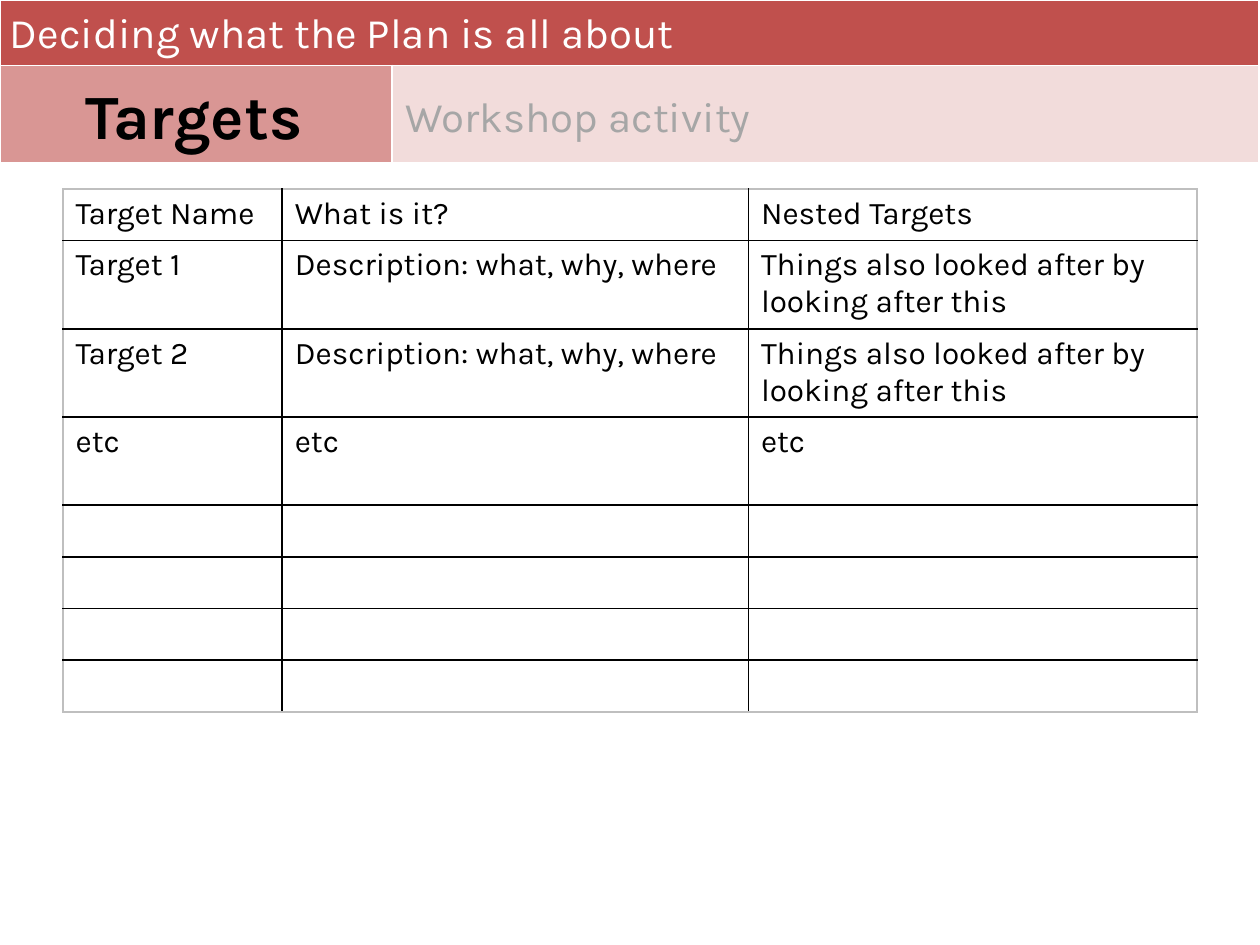
from lxml import etree
from pptx import Presentation
from pptx.dml.color import RGBColor
from pptx.enum.text import MSO_ANCHOR, PP_ALIGN
from pptx.oxml.ns import qn
from pptx.util import Inches, Pt

LEFT, CENTER = PP_ALIGN.LEFT, PP_ALIGN.CENTER
MIDDLE = MSO_ANCHOR.MIDDLE
FONT = "Karla"
COLORS = {
    "title_band": "C0504D",
    "label_band": "D99694",
    "activity_band": "F2DCDB",
    "activity_text": "A6A6A6",
    "outline": "BFBFBF",
    "white": "FFFFFF",
    "black": "000000",
}
TARGET_ROWS = [
    ["Target Name", "What is it?", "Nested Targets"],
    *[
        [
            f"Target {number}",
            "Description: what, why, where",
            "Things also looked after by looking after this",
        ]
        for number in (1, 2)
    ],
    ["etc"] * 3,
]
ROW_HEIGHTS = [0.41] + [0.7] * 3 + [0.41] * 4


def write_text(text_frame, text, size=18, color="black", bold=False, align=LEFT):
    paragraph = text_frame.paragraphs[0]
    paragraph.alignment = align
    run = paragraph.add_run()
    run.text = text
    run.font.name = FONT
    run.font.size = Pt(size)
    run.font.bold = bold
    run.font.color.rgb = RGBColor.from_string(COLORS[color])


def add_text_box(slide, left, top, width, height, text, **text_format):
    shape = slide.shapes.add_textbox(
        Inches(left), Inches(top), Inches(width), Inches(height)
    )
    shape.text_frame.word_wrap = True
    shape.text_frame.vertical_anchor = MIDDLE
    write_text(shape.text_frame, text, **text_format)


def add_plain_table(slide, left, top, widths, heights):
    table = slide.shapes.add_table(
        len(heights), len(widths), Inches(left), Inches(top),
        Inches(sum(widths)), Inches(sum(heights)),
    ).table
    table.first_row = False
    table.horz_banding = False
    for column, width in zip(table.columns, widths):
        column.width = Inches(width)
    for row, height in zip(table.rows, heights):
        row.height = Inches(height)
    return table


def set_borders(cell, **side_colors):
    properties = cell._tc.get_or_add_tcPr()
    for side in "LRTB":
        line = etree.SubElement(properties, qn(f"a:ln{side}"), w=str(Pt(1)))
        fill = etree.SubElement(line, qn("a:solidFill"))
        etree.SubElement(fill, qn("a:srgbClr"), val=COLORS[side_colors[side]])


def add_header_bands(slide):
    table = add_plain_table(slide, 0, 0, [3.11, 6.88], [0.52, 0.77])
    bands = [["title_band", "title_band"], ["label_band", "activity_band"]]
    for row, colors in zip(table.rows, bands):
        for cell, color in zip(row.cells, colors):
            set_borders(cell, **dict.fromkeys("LRTB", "white"))
            cell.fill.solid()
            cell.fill.fore_color.rgb = RGBColor.from_string(COLORS[color])
    table.cell(0, 0).merge(table.cell(0, 1))


def add_targets_table(slide):
    widths = [1.74, 3.7, 3.56]
    table = add_plain_table(slide, 0.5, 1.5, widths, ROW_HEIGHTS)
    last_row, last_column = len(ROW_HEIGHTS) - 1, len(widths) - 1
    for row_index, row in enumerate(table.rows):
        for column_index, cell in enumerate(row.cells):
            on_edge = {
                "L": column_index == 0,
                "R": column_index == last_column,
                "T": row_index == 0,
                "B": row_index == last_row,
            }
            set_borders(cell, **{
                side: "outline" if edge else "black"
                for side, edge in on_edge.items()
            })
            cell.fill.background()
            if row_index < len(TARGET_ROWS):
                write_text(cell.text_frame, TARGET_ROWS[row_index][column_index])


def main():
    presentation = Presentation()
    presentation.slide_width = Inches(10)
    presentation.slide_height = Inches(7.5)
    slide = presentation.slides.add_slide(presentation.slide_layouts[6])
    add_header_bands(slide)
    add_targets_table(slide)
    add_text_box(slide, 3.12, 0.67, 6.88, 0.5, "Workshop activity",
                 size=24, color="activity_text")
    add_text_box(slide, -0.02, 0, 9.98, 0.51, "Deciding what the Plan is all about",
                 size=24, color="white")
    add_text_box(slide, 0, 0.55, 3.08, 0.71, "Targets",
                 size=36, bold=True, align=CENTER)
    presentation.save("out.pptx")


if __name__ == "__main__":
    main()
